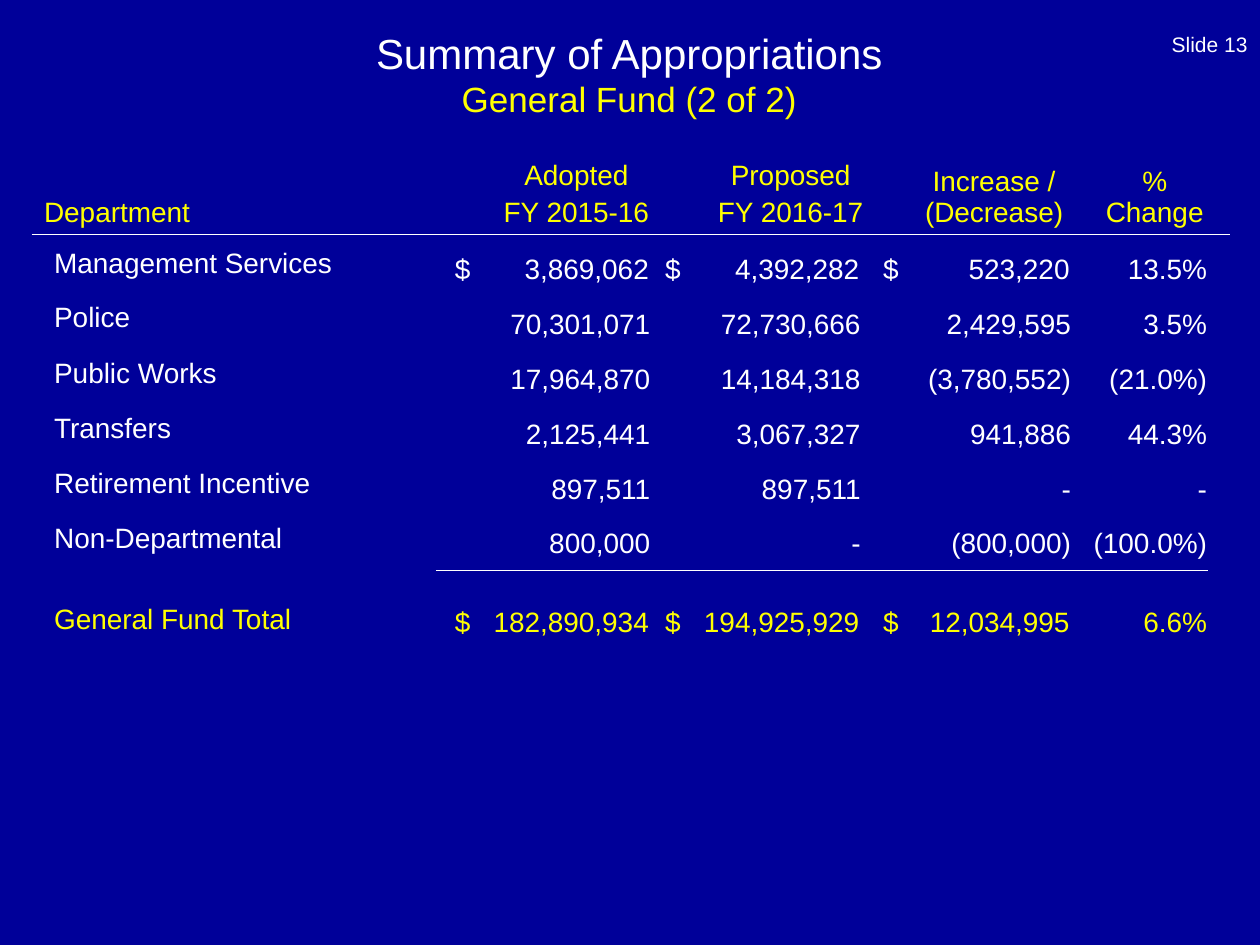
from lxml.etree import SubElement
from pptx import Presentation
from pptx.dml.color import RGBColor
from pptx.enum.text import MSO_ANCHOR, PP_ALIGN
from pptx.oxml import parse_xml
from pptx.oxml.ns import nsdecls, qn
from pptx.util import Inches, Pt

COLORS = {"background": "000099", "text": "FFFFFF", "accent": "FFFF00"}
FONT = "Arial"
NO_STYLE = "{2D5ABB26-0587-4C30-8999-92F81FD0307C}"
CELL_INSET = 0.01

HEADINGS = ["Department", "Adopted\nFY 2015-16", "Proposed\nFY 2016-17",
            "Increase / (Decrease)", "% Change"]
HEADING_WIDTHS = [3.56, 1.53, 1.87, 1.36, 1.19]
HEADING_HEIGHTS = [0.69, 0.37]

# A tab parts the dollar sign from its amount; the empty row is a gap
APPROPRIATIONS = [
    ["Management Services", "$\t3,869,062", "$\t4,392,282", "$\t523,220", "13.5%"],
    ["Police", "70,301,071", "72,730,666", "2,429,595", "3.5%"],
    ["Public Works", "17,964,870", "14,184,318", "(3,780,552)", "(21.0%)"],
    ["Transfers", "2,125,441", "3,067,327", "941,886", "44.3%"],
    ["Retirement Incentive", "897,511", "897,511", "-", "-"],
    ["Non-Departmental", "800,000", "-", "(800,000)", "(100.0%)"],
    [""] * 5,
    ["General Fund Total", "$\t182,890,934", "$\t194,925,929", "$\t12,034,995", "6.6%"],
]
AMOUNT_WIDTHS = [3.13, 1.71, 1.67, 1.67, 1.08]
AMOUNT_HEIGHTS = [0.43, 0.44, 0.44, 0.44, 0.43, 0.43, 0.22, 0.38]
DOLLAR_INSETS = {1: 0.15, 2: 0.11, 3: 0.17}
LAST_DEPARTMENT_ROW = 5
TOTAL_ROW = 7


def style_font(font, size, color):
    font.name = FONT
    font.size = Pt(size)
    font.color.rgb = RGBColor.from_string(COLORS[color])


def add_text(slide, left, top, width, height, lines, alignment, anchor):
    """Add one paragraph whose lines are (text, size, color)."""
    shape = slide.shapes.add_textbox(Inches(left), Inches(top), Inches(width), Inches(height))
    frame = shape.text_frame
    frame.word_wrap = True
    frame.vertical_anchor = anchor
    paragraph = frame.paragraphs[0]
    paragraph.alignment = alignment
    for index, (text, size, color) in enumerate(lines):
        if index:
            paragraph.add_line_break()
        run = paragraph.add_run()
        run.text = text
        style_font(run.font, size, color)


def add_plain_table(slide, left, top, widths, heights):
    frame = slide.shapes.add_table(len(heights), len(widths), Inches(left), Inches(top),
                                   Inches(sum(widths)), Inches(sum(heights)))
    table = frame.table
    table.first_row = table.horz_banding = False
    table._tbl.tblPr.find(qn("a:tableStyleId")).text = NO_STYLE
    for column, width in zip(table.columns, widths):
        column.width = Inches(width)
    for row, height in zip(table.rows, heights):
        row.height = Inches(height)
    for cell in table.iter_cells():
        cell.fill.background()
    return table


def add_bottom_border(cell):
    border = parse_xml(
        f'<a:lnB {nsdecls("a")} w="12700"><a:solidFill>'
        f'<a:srgbClr val="{COLORS["text"]}"/></a:solidFill></a:lnB>')
    cell._tc.get_or_add_tcPr().insert(0, border)


def shrink_empty_cell(cell):
    cell.margin_top = cell.margin_bottom = 0
    SubElement(cell.text_frame.paragraphs[0]._p, qn("a:endParaRPr"), sz="800")


def add_right_tab(paragraph, position):
    tabs = SubElement(paragraph._p.get_or_add_pPr(), qn("a:tabLst"))
    SubElement(tabs, qn("a:tab"), pos=str(Inches(position)), algn="r")


def fill_heading(cell, text, alignment):
    cell.text = text
    cell.vertical_anchor = MSO_ANCHOR.BOTTOM
    for index, paragraph in enumerate(cell.text_frame.paragraphs):
        paragraph.alignment = alignment
        if index:
            paragraph.space_before = Pt(3.2)
        style_font(paragraph.font, 16, "accent")


def fill_amount(cell, text, column, color):
    cell.text = text
    paragraph = cell.text_frame.paragraphs[0]
    if column:
        cell.vertical_anchor = MSO_ANCHOR.MIDDLE
        cell.margin_left = cell.margin_right = cell.margin_top = Inches(CELL_INSET)
        cell.margin_bottom = 0
        paragraph.alignment = PP_ALIGN.RIGHT
    if "\t" in text:
        inset = DOLLAR_INSETS[column]
        cell.margin_left = Inches(inset)
        paragraph.alignment = PP_ALIGN.LEFT
        add_right_tab(paragraph, AMOUNT_WIDTHS[column] - inset - 2 * CELL_INSET)
    style_font(paragraph.font, 16, color)


def add_headings(slide):
    table = add_plain_table(slide, 0.25, 1.17, HEADING_WIDTHS, HEADING_HEIGHTS)
    for column, heading in enumerate(HEADINGS):
        cell = table.cell(0, column)
        fill_heading(cell, heading, PP_ALIGN.CENTER if column else PP_ALIGN.LEFT)
        add_bottom_border(cell)
        shrink_empty_cell(table.cell(1, column))


def add_appropriations(slide):
    table = add_plain_table(slide, 0.33, 1.92, AMOUNT_WIDTHS, AMOUNT_HEIGHTS)
    for row, values in enumerate(APPROPRIATIONS):
        color = "accent" if row == TOTAL_ROW else "text"
        for column, text in enumerate(values):
            cell = table.cell(row, column)
            if text:
                fill_amount(cell, text, column, color)
            else:
                shrink_empty_cell(cell)
            if row == LAST_DEPARTMENT_ROW and column:
                add_bottom_border(cell)


def main():
    presentation = Presentation()
    presentation.slide_width = Inches(10)
    presentation.slide_height = Inches(7.5)
    slide = presentation.slides.add_slide(presentation.slide_layouts[6])
    background = slide.background.fill
    background.solid()
    background.fore_color.rgb = RGBColor.from_string(COLORS["background"])

    # Slide number and title
    add_text(slide, 7.67, 0, 2.33, 0.5, [("Slide 13", 12, "text")],
             PP_ALIGN.RIGHT, MSO_ANCHOR.BOTTOM)
    add_text(slide, 0.33, 0.25, 9.33, 0.67,
             [("Summary of Appropriations", 24, "text"),
              ("General Fund (2 of 2)", 20, "accent")],
             PP_ALIGN.CENTER, MSO_ANCHOR.MIDDLE)

    # Column headings, then departments and total
    add_headings(slide)
    add_appropriations(slide)
    presentation.save("out.pptx")


if __name__ == "__main__":
    main()
